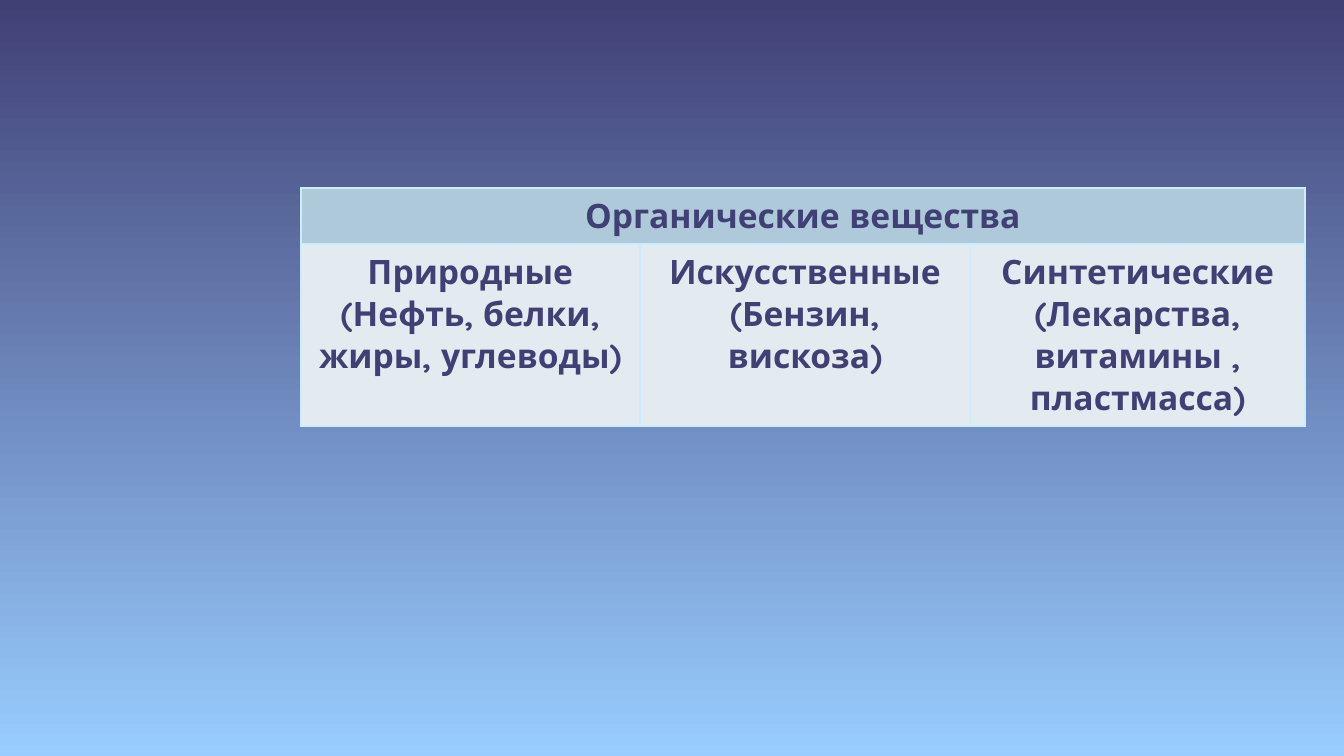
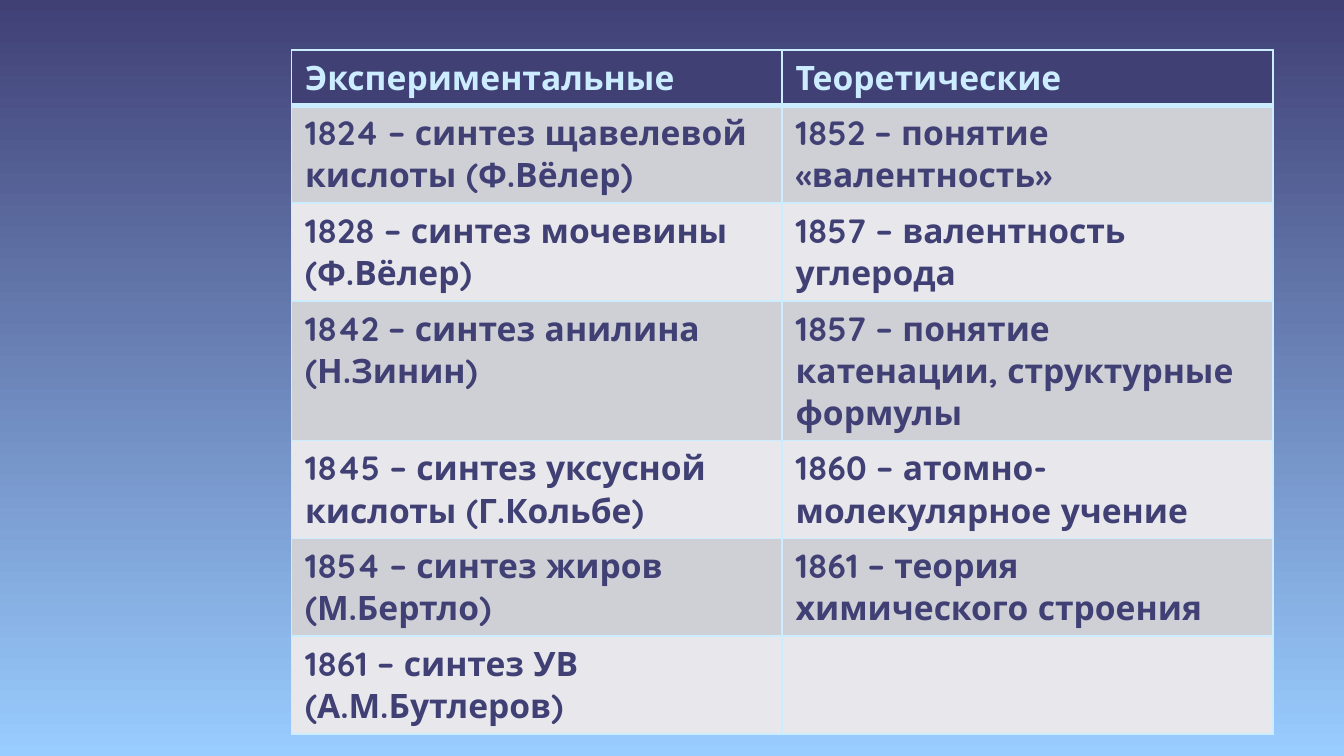
"""Builds two slides with tables on organic substances and discoveries."""
import pptx
import pptx.dml.color
import pptx.enum.text
import pptx.oxml.ns
import pptx.util
from lxml import etree

Inches = pptx.util.Inches
Pt = pptx.util.Pt
RGBColor = pptx.dml.color.RGBColor
ALIGN = pptx.enum.text.PP_ALIGN

NAVY = RGBColor(0x40, 0x40, 0x75)
SKY = RGBColor(0x99, 0xCC, 0xFF)
ICE = RGBColor(0xCC, 0xEC, 0xFF)
STEEL = RGBColor(0xAE, 0xC9, 0xDA)
MIST = RGBColor(0xE3, 0xEB, 0xF1)
GREY = RGBColor(0xCF, 0xCF, 0xD6)
PALE = RGBColor(0xE8, 0xE8, 0xEC)
FONT = "Quicksand"
ROW_HEIGHT = 0.41

TABLES = [
    {
        "place": (2.24, 1.4, 1.71),
        "columns": [2.52, 2.46, 2.49],
        "align": ALIGN.CENTER,
        "header": (STEEL, NAVY),
        "header_rule": 1,
        "bands": [MIST],
        "rows": [
            ["Органические вещества"],
            [
                "Природные\n(Нефть, белки, жиры, углеводы)",
                "Искусственные\n(Бензин, вискоза)",
                "Синтетические\n(Лекарства, витамины , пластмасса)",
            ],
        ],
    },
    {
        "place": (2.17, 0.37, 4.61),
        "columns": [3.65, 3.65],
        "align": ALIGN.LEFT,
        "header": (NAVY, ICE),
        "header_rule": 3,
        "bands": [GREY, PALE],
        "rows": [
            ["Экспериментальные", "Теоретические"],
            ["1824 – синтез щавелевой кислоты (Ф.Вёлер)", "1852 – понятие «валентность»"],
            ["1828 – синтез мочевины (Ф.Вёлер)", "1857 – валентность углерода"],
            ["1842 – синтез анилина (Н.Зинин)", "1857 – понятие катенации, структурные формулы"],
            ["1845 – синтез уксусной кислоты (Г.Кольбе)", "1860 – атомно-молекулярное учение"],
            ["1854 – синтез жиров (М.Бертло)", "1861 – теория химического строения"],
            ["1861 – синтез УВ (А.М.Бутлеров)", ""],
        ],
    },
]


def paint_background(page):
    fill = page.background.fill
    fill.gradient()
    fill.gradient_angle = 270
    for stop, color in zip(fill.gradient_stops, (NAVY, SKY)):
        stop.color.rgb = color


def set_borders(cell, top, bottom):
    properties = cell._tc.get_or_add_tcPr()
    qn = pptx.oxml.ns.qn
    for side, width in (("L", 1), ("R", 1), ("T", top), ("B", bottom)):
        line = etree.SubElement(properties, qn(f"a:ln{side}"), w=str(Pt(width)))
        fill = etree.SubElement(line, qn("a:solidFill"))
        etree.SubElement(fill, qn("a:srgbClr"), val=str(ICE))


def style_cell(cell, text, fill, color, align, top, bottom):
    set_borders(cell, top, bottom)
    cell.fill.solid()
    cell.fill.fore_color.rgb = fill
    cell.text_frame.text = text
    for para in cell.text_frame.paragraphs:
        para.alignment = align
        para.font.name = FONT
        para.font.size = Pt(18)
        para.font.bold = True
        para.font.color.rgb = color


def add_table(page, content):
    left, top, height = content["place"]
    columns, rows = content["columns"], content["rows"]
    frame = page.shapes.add_table(
        len(rows), len(columns), Inches(left), Inches(top), Inches(sum(columns)), Inches(height)
    )
    table = frame.table
    table.first_row = True
    table.horz_banding = False
    for column, width in zip(table.columns, columns):
        column.width = Inches(width)
    for row in table.rows:
        row.height = Inches(ROW_HEIGHT)
    frame.height = Inches(height)

    rule, bands = content["header_rule"], content["bands"]
    for index, texts in enumerate(rows):
        fill, color = content["header"] if index == 0 else (bands[(index - 1) % len(bands)], NAVY)
        above = rule if index == 1 else 1
        below = rule if index == 0 else 1
        padded = texts + [""] * (len(columns) - len(texts))
        for number, text in enumerate(padded):
            style_cell(table.cell(index, number), text, fill, color, content["align"], above, below)
        if len(texts) == 1:
            table.cell(index, 0).merge(table.cell(index, len(columns) - 1))


def main():
    deck = pptx.Presentation()
    deck.slide_width = Inches(10)
    deck.slide_height = deck.slide_width * 9 // 16
    for content in TABLES:
        page = deck.slides.add_slide(deck.slide_layouts[6])
        paint_background(page)
        add_table(page, content)
    deck.save("out.pptx")


if __name__ == "__main__":
    main()
